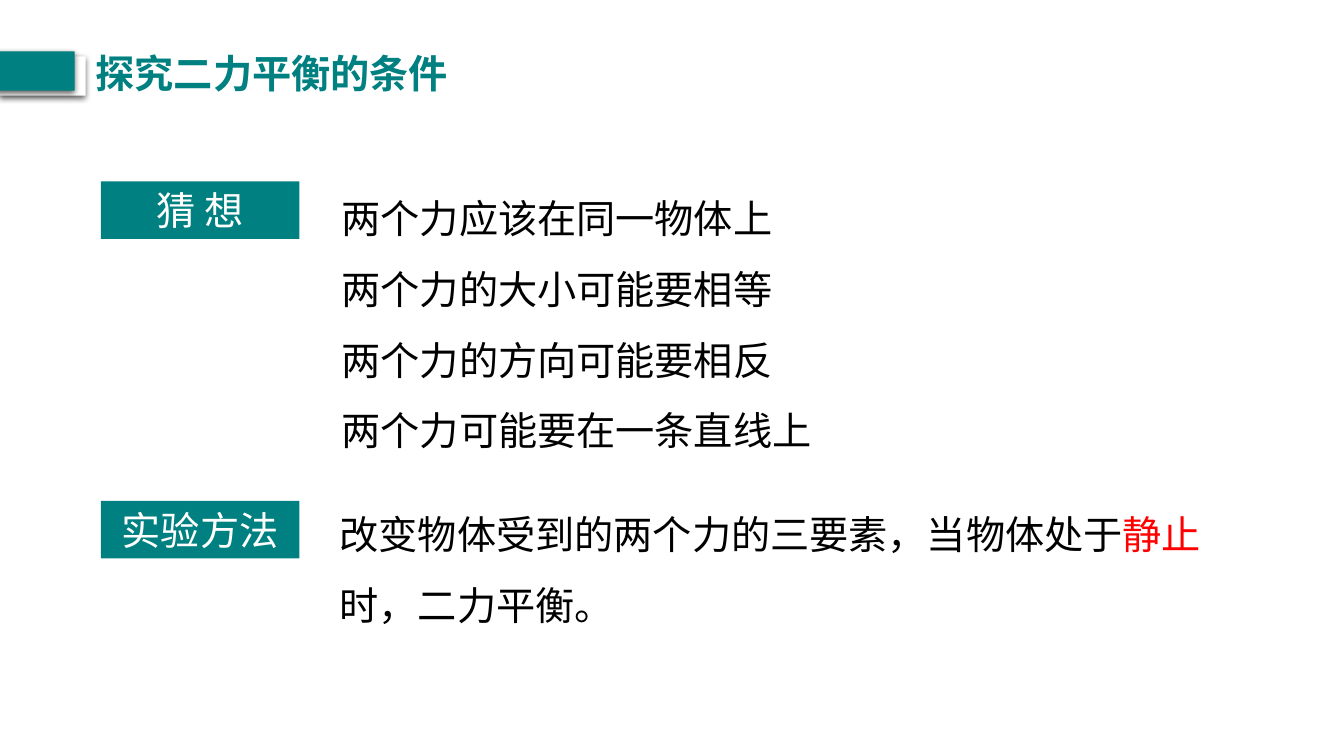
from lxml import etree
from pptx import Presentation
from pptx.dml.color import RGBColor
from pptx.enum.shapes import MSO_SHAPE
from pptx.enum.text import MSO_ANCHOR, MSO_AUTO_SIZE, PP_ALIGN
from pptx.oxml import parse_xml
from pptx.oxml.ns import nsdecls, qn
from pptx.util import Inches, Pt

RECTANGLE = MSO_SHAPE.RECTANGLE
MIDDLE, TOP = MSO_ANCHOR.MIDDLE, MSO_ANCHOR.TOP
LEFT, CENTER = PP_ALIGN.LEFT, PP_ALIGN.CENTER
GROW = MSO_AUTO_SIZE.SHAPE_TO_FIT_TEXT

FONT = "Noto Sans CJK SC"
TEAL, WHITE, BLACK, RED = "008080", "FFFFFF", "000000", "FF0000"


def color(hex_value):
    return RGBColor.from_string(hex_value)


def write(shape, runs, align=LEFT, anchor=TOP, spacing=None, bold=False):
    """Fill a shape with one paragraph of (text, colour) runs."""
    frame = shape.text_frame
    frame.word_wrap = True
    frame.vertical_anchor = anchor
    paragraph = frame.paragraphs[0]
    paragraph.alignment = align
    if spacing:
        paragraph.line_spacing = spacing
    for text, hex_value in runs:
        run = paragraph.add_run()
        run.text = text
        run.font.name = FONT
        run.font.size = Pt(28)
        run.font.bold = bold
        run.font.color.rgb = color(hex_value)
        east_asian = etree.SubElement(run.font._element, qn("a:ea"))
        east_asian.set("typeface", FONT)


def add_text(slide, box, runs, **text_format):
    label = slide.shapes.add_textbox(*map(Inches, box))
    write(label, runs, **text_format)
    label.text_frame.auto_size = GROW


def add_block(slide, box, fill):
    block = slide.shapes.add_shape(RECTANGLE, *map(Inches, box))
    block.shadow.inherit = False
    block.fill.solid()
    block.fill.fore_color.rgb = color(fill)
    block.line.fill.background()
    return block


def add_shadow(block):
    effects = block._element.spPr.find(qn("a:effectLst"))
    effects.append(parse_xml(
        f'<a:outerShdw {nsdecls("a")} blurRad="{Pt(4.5)}" dist="{Pt(1.5)}" '
        'dir="5400000" algn="t" rotWithShape="0"><a:srgbClr val="000000">'
        '<a:alpha val="63000"/></a:srgbClr></a:outerShdw>'))


def add_header(slide, left, top, title):
    # White tab behind, teal tab shifted up and to the left
    for dx, dy, fill in ((0, 0.12, WHITE), (-0.11, 0.07, TEAL)):
        add_shadow(add_block(slide, (left + dx, top + dy, 0.85, 0.39), fill))
    add_text(slide, (left + 0.85, top, 3.74, 0.57), [(title, TEAL)], bold=True)


def add_badge(slide, left, top, caption):
    badge = add_block(slide, (left, top, 1.97, 0.57), TEAL)
    write(badge, [(caption, WHITE)], align=CENTER, anchor=MIDDLE)


def add_guesses(slide, left, top, guesses):
    add_badge(slide, left, top, "猜 想")
    for row, guess in enumerate(guesses):
        add_text(slide, (left + 2.29, top - 0.01 + row * 0.7, 6.24, 0.67),
                 [(guess, BLACK)], spacing=1.2)


def add_method(slide, left, top, runs):
    add_badge(slide, left, top, "实验方法")
    add_text(slide, (left + 2.27, top - 0.19, 8.91, 1.51), runs, spacing=1.5)


def main():
    deck = Presentation()
    deck.slide_width, deck.slide_height = Inches(13.33), Inches(7.5)
    slide = deck.slides.add_slide(deck.slide_layouts[6])

    add_header(slide, 0, 0.44, "探究二力平衡的条件")
    add_guesses(slide, 1, 1.8, [
        "两个力应该在同一物体上",
        "两个力的大小可能要相等",
        "两个力的方向可能要相反",
        "两个力可能要在一条直线上",
    ])
    add_method(slide, 1, 4.97, [
        ("改变物体受到的两个力的三要素，当物体处于", BLACK),
        ("静止", RED),
        ("时，二力平衡。", BLACK),
    ])
    deck.save("out.pptx")


if __name__ == "__main__":
    main()
